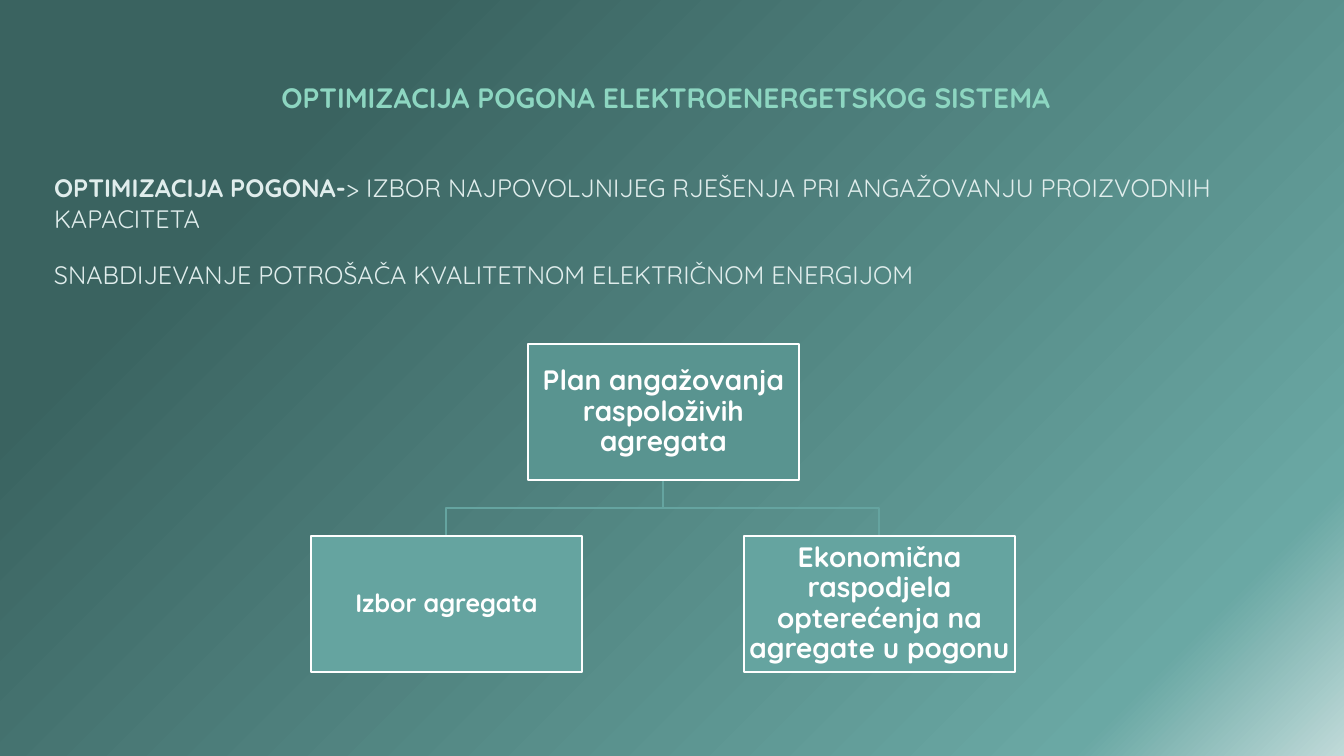
from pptx import Presentation
from pptx import util as u
from pptx.dml.color import RGBColor
from pptx.enum import shapes, text
from pptx.oxml import parse_xml
from pptx.oxml.ns import nsdecls, qn

PX = 914400 / 100.8
FONT = "Quicksand"
PALE, MINT, WHITE = "E0EDEC", "8DD6C1", "FFFFFF"
DARK_TEAL, TEAL = "599490", "65A4A0"
BOX_W, BOX_H = 271, 136
STOPS = [(0, "C0DAD9"), (13, "6AA8A4"), (80, "3A6360")]


def px(n):
    return u.Emu(round(n * PX))


def rgb(value):
    return RGBColor.from_string(value)


def set_background(s):
    """Radial gradient that spreads from the bottom right corner."""
    s.background.fill.gradient()
    old = s.element.find(".//" + qn("a:gradFill"))
    stops = "".join(
        f'<a:gs pos="{pos * 1000}"><a:srgbClr val="{color}"/></a:gs>'
        for pos, color in STOPS)
    old.getparent().replace(old, parse_xml(
        f'<a:gradFill {nsdecls("a")} rotWithShape="1"><a:gsLst>{stops}</a:gsLst>'
        '<a:path path="circle"><a:fillToRect l="100000" t="100000"/></a:path>'
        '</a:gradFill>'))


def write(sp, runs, size=18, color=PALE, align="LEFT", spacing=1.0, margins=(10, 5, 10, 5)):
    """Fill a shape with one paragraph of (text, bold) runs; margins are left, top, right, bottom."""
    tf = sp.text_frame
    tf.word_wrap = True
    tf.auto_size = text.MSO_AUTO_SIZE.NONE
    tf.vertical_anchor = text.MSO_ANCHOR.MIDDLE
    tf.margin_left, tf.margin_top, tf.margin_right, tf.margin_bottom = map(px, margins)
    p = tf.paragraphs[0]
    p.alignment = getattr(text.PP_ALIGN, align)
    p.line_spacing = spacing
    for words, bold in runs:
        r = p.add_run()
        r.text = words
        r.font.name, r.font.size, r.font.bold = FONT, u.Pt(size), bold
        r.font.color.rgb = rgb(color)


def place(sp, x, y, w, h):
    sp.left, sp.top, sp.width, sp.height = map(px, (x, y, w, h))


def add_text(s, x, y, w, h, runs, **fmt):
    write(s.shapes.add_textbox(*map(px, (x, y, w, h))), runs, **fmt)


def set_line(sp, color):
    sp.shadow.inherit = False
    sp.line.color.rgb = rgb(color)
    sp.line.width = u.Pt(1.25)


def add_box(s, x, y, label, fill, size=20):
    sp = s.shapes.add_shape(shapes.MSO_SHAPE.RECTANGLE, *map(px, (x, y, BOX_W, BOX_H)))
    sp.fill.solid()
    sp.fill.fore_color.rgb = rgb(fill)
    set_line(sp, WHITE)
    write(sp, [(label, True)], size=size, color=WHITE, align="CENTER",
          spacing=0.9, margins=(1, 1, 1, 1))


def add_branch(s, x1, y1, x2, y2):
    """Right-angled line from a parent box down to a child box."""
    mid = (y1 + y2) // 2
    builder = s.shapes.build_freeform(x1, y1, scale=PX)
    builder.add_line_segments([(x1, mid), (x2, mid), (x2, y2)], close=False)
    sp = builder.convert_to_shape()
    sp.fill.background()
    set_line(sp, TEAL)


def main():
    prs = Presentation()
    prs.slide_width, prs.slide_height = px(1344), px(756)
    s = prs.slides.add_slide(prs.slide_layouts[5])
    set_background(s)

    title = s.shapes.title
    place(title, 44, 162, 1300, 112)
    low_margins = (10, 5, 10, 35)
    write(title, [
        ("OPTIMIZACIJA POGONA-", True),
        ("> IZBOR NAJPOVOLJNIJEG RJEŠENJA PRI ANGAŽOVANJU PROIZVODNIH KAPACITETA", False),
    ], margins=low_margins)
    add_text(s, 196, 46, 940, 102,
             [("OPTIMIZACIJA POGONA ELEKTROENERGETSKOG SISTEMA", True)],
             size=20, color=MINT, align="CENTER")

    root_x, root_y, child_y = 528, 344, 536
    children = [
        (744, "Ekonomična raspodjela opterećenja na agregate u pogonu", 20),
        (311, "Izbor agregata", 18),
    ]
    for x, _, _ in children:
        add_branch(s, root_x + BOX_W // 2, root_y + BOX_H, x + BOX_W // 2, child_y)
    add_box(s, root_x, root_y, "Plan angažovanja raspoloživih agregata", DARK_TEAL)
    for x, label, size in children:
        add_box(s, x, child_y, label, TEAL, size)

    add_text(s, 44, 233, 1300, 112,
             [("SNABDIJEVANJE POTROŠAČA KVALITETNOM ELEKTRIČNOM ENERGIJOM", False)],
             margins=low_margins)
    prs.save("out.pptx")


if __name__ == "__main__":
    main()
